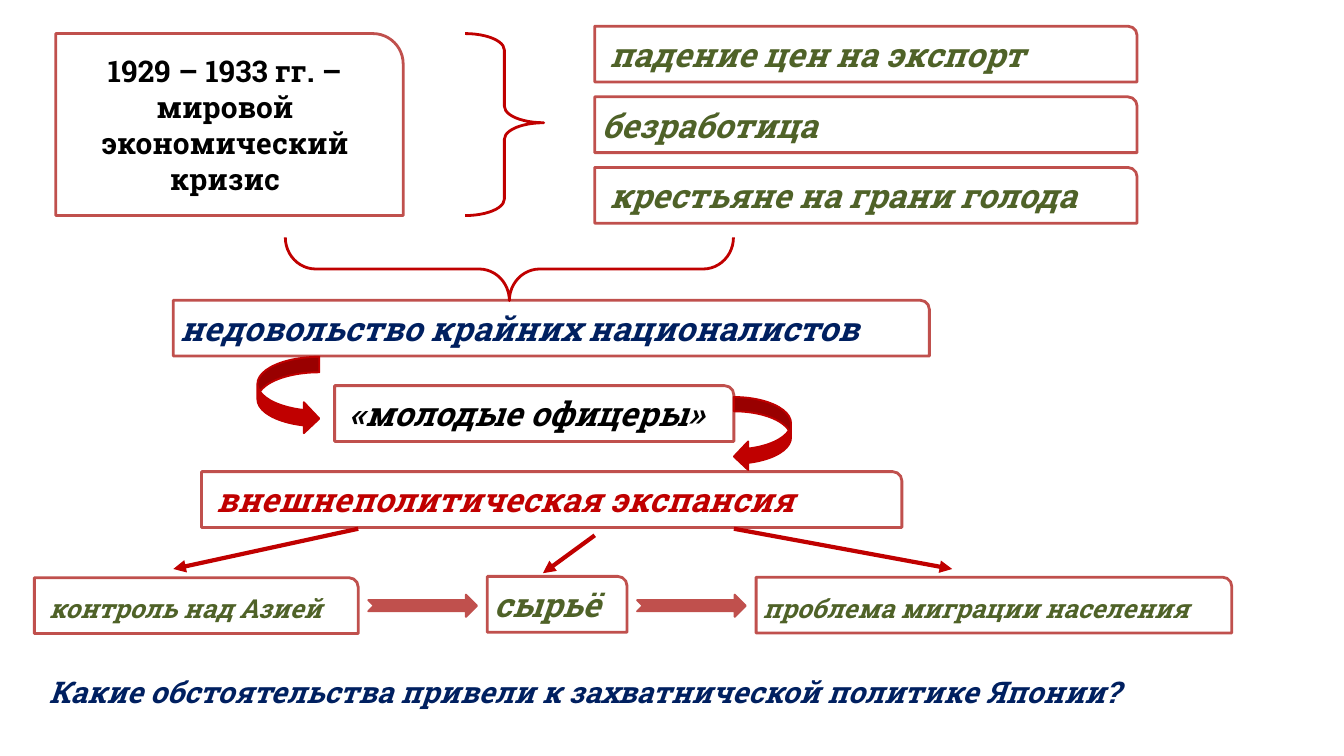
from dataclasses import dataclass

import pptx
import pptx.dml.color
import pptx.enum.shapes
import pptx.enum.text
import pptx.oxml
import pptx.oxml.ns
import pptx.util

Cm = pptx.util.Cm
Pt = pptx.util.Pt
SHAPE = pptx.enum.shapes.MSO_SHAPE
ALIGN = pptx.enum.text.PP_ALIGN


@dataclass(frozen=True)
class Theme:
    font: str = "Roboto Slab"
    white: str = "FFFFFF"
    black: str = "000000"
    border: str = "C0504D"
    red: str = "C00000"
    green: str = "4F6228"
    navy: str = "002060"
    large: int = 36
    medium: int = 32
    small: int = 28
    outline: float = 3
    thin: float = 2
    thick: float = 4.5
    row: float = 2.11      # height of a one-line box, cm
    margin: float = 0.25   # side margin inside a box, cm
    indent: float = 0.3    # extra left margin of an indented box, cm


def rgb(color):
    return pptx.dml.color.RGBColor.from_string(color)


class Diagram:
    def __init__(self, slide, theme):
        self.s = slide
        self.t = theme

    def shape(self, kind, x, y, w, h, fill, line, width):
        sp = self.s.shapes.add_shape(kind, Cm(x), Cm(y), Cm(w), Cm(h))
        sp.shadow.inherit = False
        if fill:
            sp.fill.solid()
            sp.fill.fore_color.rgb = rgb(fill)
        else:
            sp.fill.background()
        sp.line.color.rgb = rgb(line)
        sp.line.width = Pt(width)
        return sp

    def box(self, text, x, y, w, color, h=None, size=None, indented=False,
            drop=0, framed=True, italic=True, align=ALIGN.LEFT):
        """Box with one rounded corner; drop lowers the text, in cm."""
        t = self.t
        sp = self.shape(SHAPE.ROUND_1_RECTANGLE, x, y, w, h or t.row,
                        t.white if framed else None,
                        t.border if framed else t.white, t.outline)
        tf = sp.text_frame
        tf.word_wrap = True
        tf.vertical_anchor = pptx.enum.text.MSO_ANCHOR.MIDDLE
        tf.margin_left = Cm(t.margin + (t.indent if indented else 0))
        tf.margin_right = Cm(t.margin)
        tf.margin_top = Cm(0.13 + 2 * drop)
        tf.margin_bottom = Cm(0.13)
        tf.text = text
        for p in tf.paragraphs:
            p.alignment = align
            for r in p.runs:
                r.font.name = t.font
                r.font.size = Pt(size or t.large)
                r.font.bold = True
                r.font.italic = italic
                r.font.color.rgb = rgb(color)

    def brace(self, x, y, w, h, curl, tip, downward=False):
        sp = self.shape(SHAPE.RIGHT_BRACE, x, y, w, h, None,
                        self.t.red, self.t.outline)
        sp.adjustments[0] = curl
        sp.adjustments[1] = tip
        if downward:
            sp.rotation = 270
            sp._element.spPr.xfrm.set("flipH", "1")

    def block_arrow(self, kind, x, y, w, h, color):
        self.shape(kind, x, y, w, h, color, color, self.t.thin)

    def arrow(self, x1, y1, x2, y2):
        c = self.s.shapes.add_connector(
            pptx.enum.shapes.MSO_CONNECTOR.STRAIGHT,
            Cm(x1), Cm(y1), Cm(x2), Cm(y2))
        c.line.color.rgb = rgb(self.t.red)
        c.line.width = Pt(self.t.thick)
        ns = pptx.oxml.ns.nsdecls("a")
        ln = c.line._get_or_add_ln()
        ln.append(pptx.oxml.parse_xml(f'<a:tailEnd {ns} type="triangle"/>'))
        c._element.spPr.append(pptx.oxml.parse_xml(f"<a:effectLst {ns}/>"))


def main():
    prs = pptx.Presentation()
    prs.slide_width = Cm(50.8)
    prs.slide_height = Cm(28.58)
    t = Theme()
    d = Diagram(prs.slides.add_slide(prs.slide_layouts[6]), t)

    # The crisis and its effects
    d.box("1929 – 1933 гг. –\nмировой\nэкономический\nкризис",
          2.11, 1.27, 13.13, t.black, h=6.88, size=t.medium,
          italic=False, align=ALIGN.CENTER)
    effects = [("падение цен на экспорт", True), ("безработица", False),
               ("крестьяне на грани голода", True)]
    for i, (text, indented) in enumerate(effects):
        d.box(text, 22.48, 0.99 + i * 2.67, 20.5, t.green, indented=indented)
    d.brace(17.58, 1.27, 2.97, 6.88, 0.21, 0.49)

    # From discontent to expansion
    d.box("недовольство крайних националистов", 6.55, 11.35, 28.58, t.navy)
    d.brace(18.06, 1.7, 2.39, 16.94, 0.48, 0.5, downward=True)
    d.box("«молодые офицеры»", 12.65, 14.58, 15.09, t.black, indented=True)
    d.box("внешнеполитическая экспансия", 7.62, 17.83, 26.47, t.red,
          indented=True)
    d.block_arrow(SHAPE.CURVED_RIGHT_ARROW, 9.73, 13.49, 2.34, 2.92, t.red)
    d.block_arrow(SHAPE.CURVED_LEFT_ARROW, 27.74, 15.01, 2.16, 2.79, t.red)

    # Aims of the expansion
    d.box("контроль над Азией", 1.3, 21.84, 12.24, t.green, size=t.small,
          indented=True, drop=0.11)
    d.box("сырьё", 18.42, 21.79, 5.28, t.green)
    d.box("проблема миграции населения", 28.58, 21.82, 17.98, t.green,
          size=t.small, drop=0.11)
    d.box("Какие обстоятельства привели к захватнической политике Японии?",
          1.3, 25.04, 46.1, t.navy, size=t.medium, indented=True,
          drop=0.05, framed=False)
    for ends in [(13.54, 19.99, 6.55, 21.51), (27.74, 19.99, 35.99, 21.51),
                 (22.48, 20.24, 20.52, 21.67)]:
        d.arrow(*ends)
    for x in (13.92, 24.08):
        d.block_arrow(SHAPE.NOTCHED_RIGHT_ARROW, x, 22.48, 4.11, 0.84,
                      t.border)

    prs.save("out.pptx")


if __name__ == "__main__":
    main()
